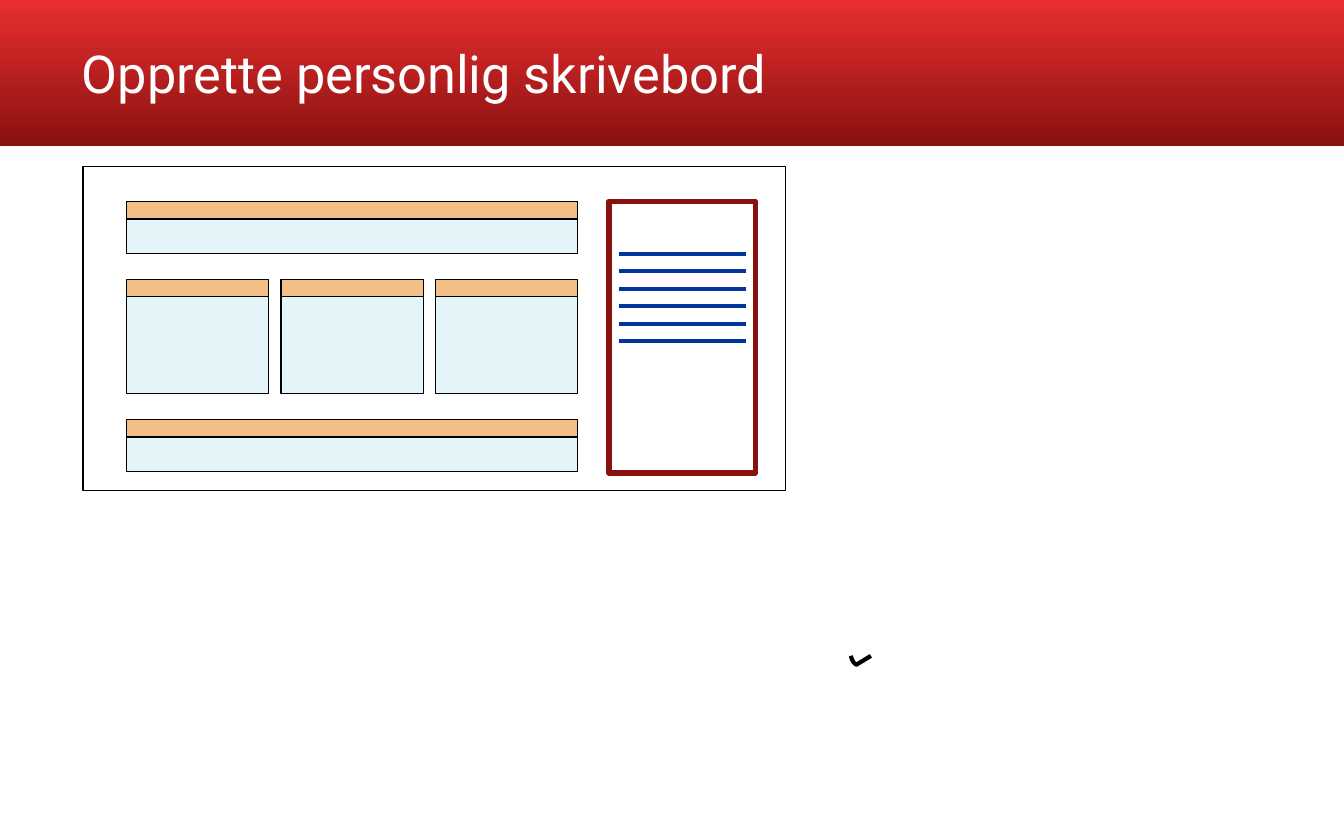
from dataclasses import dataclass

from pptx import Presentation
from pptx.dml.color import RGBColor
from pptx.enum.shapes import MSO_CONNECTOR, MSO_SHAPE
from pptx.enum.text import MSO_ANCHOR
from pptx.oxml.ns import qn
from pptx.util import Cm, Pt


@dataclass(frozen=True)
class Theme:
    font: str = "Roboto"
    title_size: int = 28
    white: str = "FFFFFF"
    black: str = "000000"
    red: str = "E92E30"
    dark_red: str = "88110F"
    pale_blue: str = "D2EFF6"
    orange: str = "FF9933"
    blue: str = "00359E"
    opacity: int = 58
    thin: float = 0.75
    medium: float = 2.25
    thick: float = 3


THEME = Theme()


def rgb(color):
    return RGBColor.from_string(color)


def apply(target, formats):
    for name, value in formats.items():
        setattr(target, name, value)


def set_line(line, color, width):
    line.color.rgb = rgb(color)
    line.width = Pt(width)


def add_rect(s, x, y, w, h, fill=None, line=THEME.black, width=THEME.thin):
    """Add a rectangle, given in centimetres, with a translucent fill or none."""
    sp = s.shapes.add_shape(MSO_SHAPE.RECTANGLE, Cm(x), Cm(y), Cm(w), Cm(h))
    sp.shadow.inherit = False
    set_line(sp.line, line, width)
    if fill is None:
        sp.fill.background()
    else:
        sp.fill.solid()
        sp.fill.fore_color.rgb = rgb(fill)
        color = sp.fill._xPr.find(qn("a:solidFill"))[0]
        color.makeelement(qn("a:alpha"), {})
        alpha = color.makeelement(qn("a:alpha"), {"val": str(THEME.opacity * 1000)})
        color.append(alpha)
    return sp


def add_header(s, title):
    band = add_rect(s, 0, 0, 25.4, 2.77)
    band.line.fill.background()
    band.fill.gradient()
    band.fill.gradient_angle = 270
    for stop, color in zip(band.fill.gradient_stops, (THEME.red, THEME.dark_red)):
        stop.color.rgb = rgb(color)

    box = s.shapes.add_textbox(Cm(1.3), Cm(0.56), Cm(18), Cm(1.63))
    tf = box.text_frame
    apply(tf, {"word_wrap": True, "vertical_anchor": MSO_ANCHOR.MIDDLE})
    r = tf.paragraphs[0].add_run()
    r.text = title
    apply(r.font, {"name": THEME.font, "size": Pt(THEME.title_size)})
    r.font.color.rgb = rgb(THEME.white)


def add_window(s, x, y, w, h):
    """Add a desktop window: a pale body with an orange title bar."""
    add_rect(s, x, y, w, h, THEME.pale_blue)
    add_rect(s, x, y, w, 0.33, THEME.orange)


def add_rule(s, x1, x2, y):
    """Add a horizontal line that stands for a line of text."""
    c = s.shapes.add_connector(MSO_CONNECTOR.STRAIGHT, Cm(x1), Cm(y), Cm(x2), Cm(y))
    set_line(c.line, THEME.blue, THEME.medium)
    sp_pr = c._element.spPr
    sp_pr.append(sp_pr.makeelement(qn("a:effectLst"), {}))


def add_check_mark(s):
    points = [(Cm(x), Cm(y)) for x, y in (
        (16.46, 12.4), (16.18, 12.57), (16.13, 12.52), (16.1, 12.46), (16.08, 12.4))]
    builder = s.shapes.build_freeform(*points[0])
    builder.add_line_segments(points[1:], close=False)
    sp = builder.convert_to_shape()
    sp.shadow.inherit = False
    sp.fill.background()
    set_line(sp.line, THEME.black, THEME.medium)


def add_desktop(s):
    add_rect(s, 1.57, 3.15, 13.28, 6.12, THEME.white)
    left = 2.39
    for top in (3.81, 7.93):
        add_window(s, left, top, 8.53, 0.99)
    for column in range(3):
        add_window(s, left + column * 2.92, 5.28, 2.69, 2.16)

    add_rect(s, 11.51, 3.81, 2.77, 5.13, line=THEME.dark_red, width=THEME.thick)
    for row in range(6):
        add_rule(s, 11.7, 14.1, 4.8 + row * 0.33)


def main():
    prs = Presentation()
    apply(prs, {"slide_width": Cm(25.4), "slide_height": Cm(15.88)})
    s = prs.slides.add_slide(prs.slide_layouts[6])
    add_header(s, "Opprette personlig skrivebord")
    add_desktop(s)
    add_check_mark(s)
    prs.save("out.pptx")


if __name__ == "__main__":
    main()
